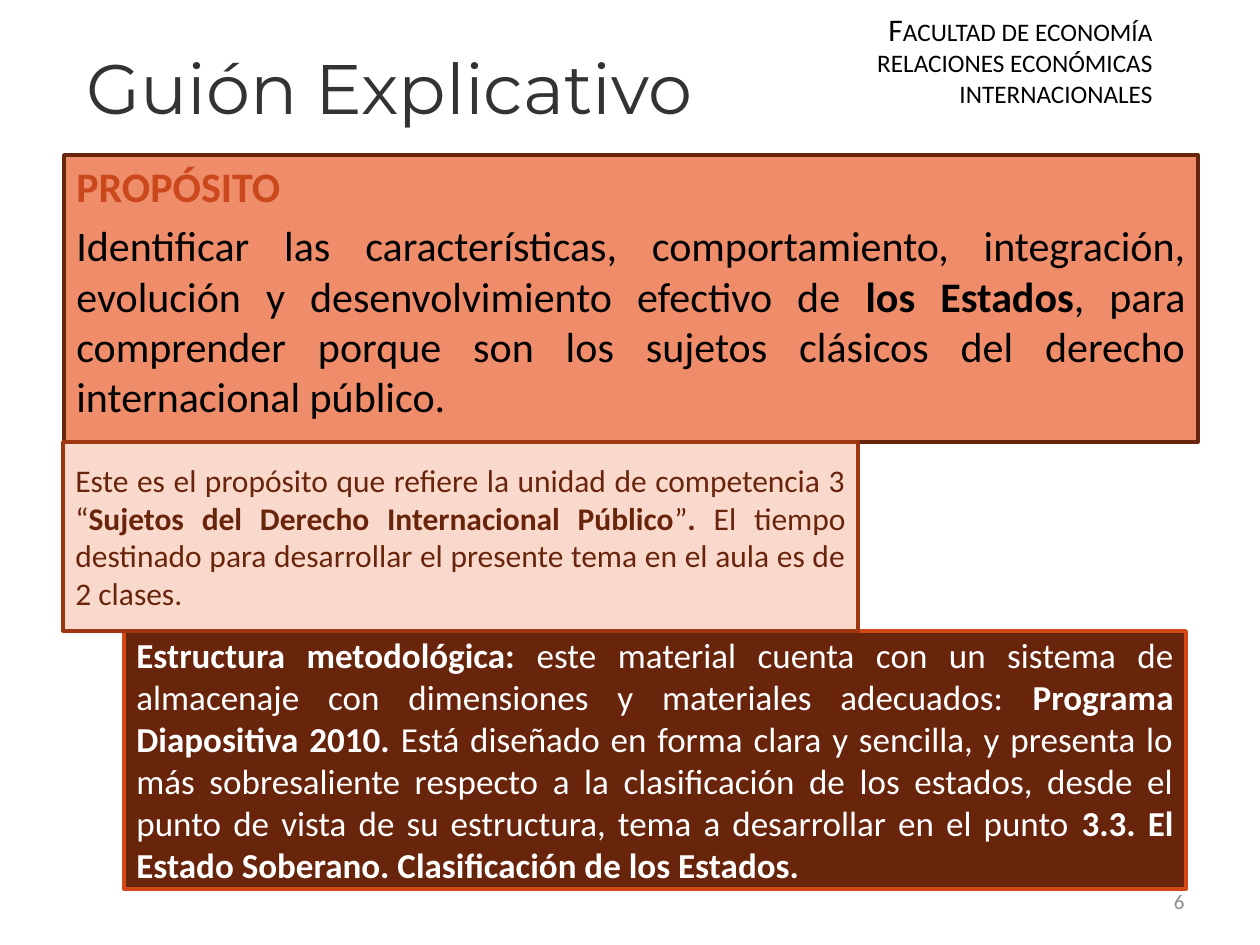
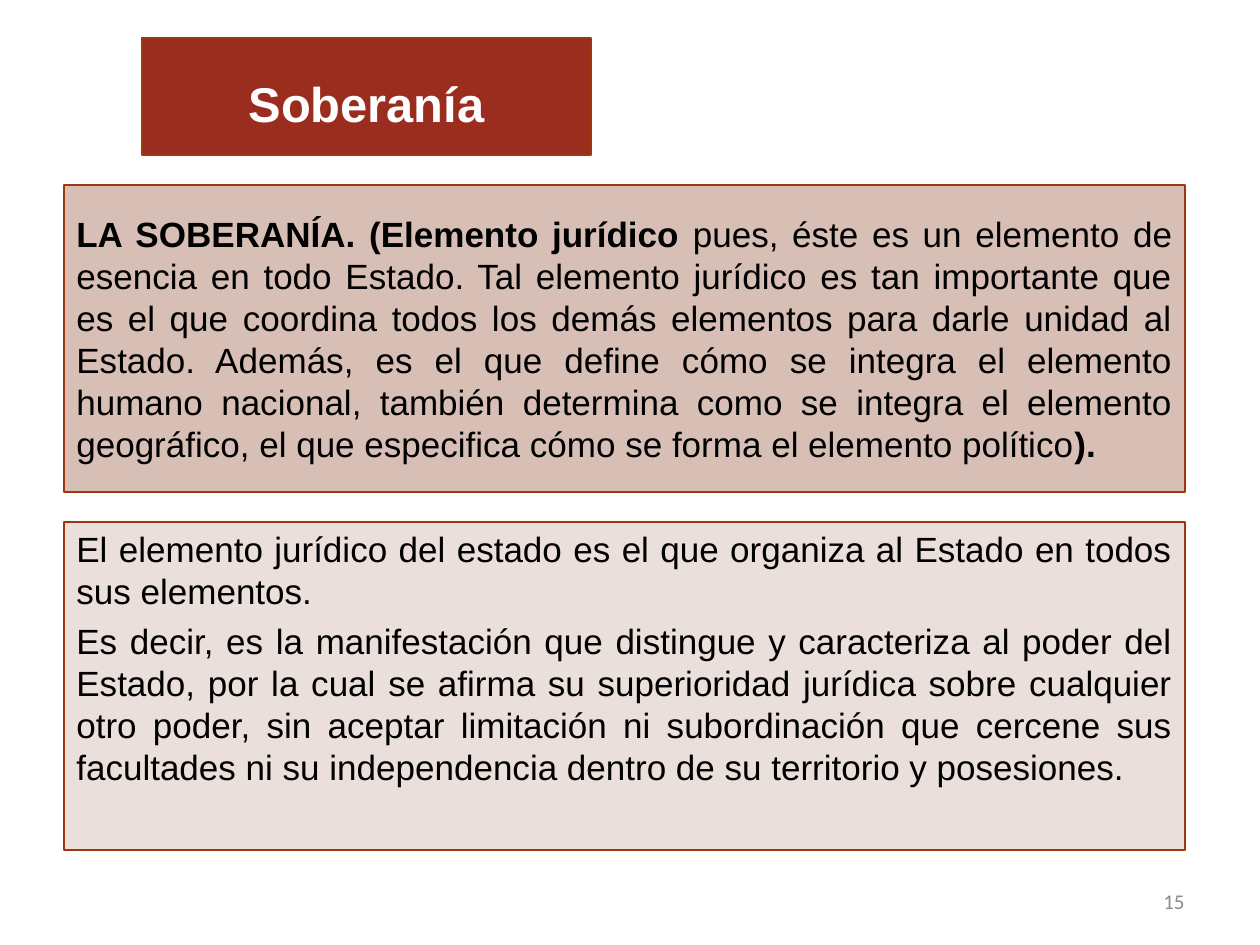
from dataclasses import dataclass
from typing import NamedTuple, Optional

import pptx
import pptx.dml.color
import pptx.enum.shapes
import pptx.enum.text
import pptx.presentation
import pptx.slide
import pptx.util

PX = pptx.util.Inches(1) / 126
ALIGN = pptx.enum.text.PP_ALIGN
ANCHOR = pptx.enum.text.MSO_ANCHOR

COLORS = {
    "black": "000000",
    "white": "FFFFFF",
    "charcoal": "353232",
    "gray": "8C8C8C",
    "salmon": "EF8C6A",
    "blush": "FAD9CD",
    "brown": "69240C",
    "rust": "9E3611",
    "orange": "D34817",
    "ember": "CA481C",
    "brick": "9B2D1F",
    "clay": "D8BFB6",
    "sand": "EBDFDB",
}


class Box(NamedTuple):
    left: int
    top: int
    width: int
    height: int


class Run(NamedTuple):
    text: str
    bold: bool = False
    size: Optional[float] = None


class Type(NamedTuple):
    font: str
    size: float
    color: str
    align: ALIGN = ALIGN.JUSTIFY


class Paragraph(NamedTuple):
    type: Type
    runs: tuple[Run, ...]
    space_before: float = 0


@dataclass(frozen=True)
class Block:
    box: Box
    paragraphs: tuple[Paragraph, ...]
    fill: Optional[str] = None
    border: str = "rust"
    border_width: float = 0.75
    anchor: ANCHOR = ANCHOR.MIDDLE
    inset_top: int = 6
    wrap: bool = True


def rgb(name: str) -> pptx.dml.color.RGBColor:
    return pptx.dml.color.RGBColor.from_string(COLORS[name])


def px(length: int) -> pptx.util.Emu:
    return pptx.util.Emu(round(length * PX))


def write(paragraph, content: Paragraph) -> None:
    style = content.type
    paragraph.alignment = style.align
    paragraph.space_before = pptx.util.Pt(content.space_before)
    paragraph.font.name = style.font
    paragraph.font.size = pptx.util.Pt(style.size)
    paragraph.font.color.rgb = rgb(style.color)
    same_weight = len({run.bold for run in content.runs}) == 1
    if same_weight:
        paragraph.font.bold = content.runs[0].bold
    for part in content.runs:
        run = paragraph.add_run()
        run.text = part.text
        if not same_weight:
            run.font.bold = part.bold
        if part.size:
            run.font.size = pptx.util.Pt(part.size)


def draw_block(slide: pptx.slide.Slide, block: Block) -> None:
    place = [px(length) for length in block.box]
    if block.fill:
        shape = slide.shapes.add_shape(
            pptx.enum.shapes.MSO_SHAPE.RECTANGLE, *place)
        shape.shadow.inherit = False
        shape.fill.solid()
        shape.fill.fore_color.rgb = rgb(block.fill)
        shape.line.color.rgb = rgb(block.border)
        shape.line.width = pptx.util.Pt(block.border_width)
    else:
        shape = slide.shapes.add_textbox(*place)
    frame = shape.text_frame
    frame.word_wrap = block.wrap
    frame.vertical_anchor = block.anchor
    frame.margin_top = px(block.inset_top)
    for index, content in enumerate(block.paragraphs):
        write(frame.add_paragraph() if index else frame.paragraphs[0], content)


def draw_slide(deck: pptx.presentation.Presentation,
               blocks: tuple[Block, ...], number: int) -> None:
    slide = deck.slides.add_slide(deck.slide_layouts[6])
    footer = Block(Box(903, 876, 294, 50),
                   (Paragraph(PAGE_NUMBER, (Run(str(number)),)),))
    for block in (footer, *blocks):
        draw_block(slide, block)


PAGE_NUMBER = Type("Calibri", 12, "gray", ALIGN.RIGHT)
FACULTY = Type("Calibri", 14.4, "black", ALIGN.RIGHT)
GUIDE_TITLE = Type("Montserrat", 40, "charcoal", ALIGN.LEFT)
PURPOSE_LABEL = Type("Calibri", 24, "ember")
PURPOSE = Type("Calibri", 24, "black")
UNIT = Type("Calibri", 18, "brown")
METHOD = Type("Calibri", 20, "white")
TOPIC_TITLE = Type("Arial", 27.9, "white", ALIGN.CENTER)
TOPIC = Type("Arial", 20, "black")

GUIDE = (
    Block(Box(772, 6, 393, 129), (
        Paragraph(FACULTY, (Run("F", size=18), Run("ACULTAD DE ECONOMÍA"))),
        Paragraph(FACULTY, (Run("RELACIONES ECONÓMICAS INTERNACIONALES"),)),
    ), anchor=ANCHOR.TOP, inset_top=4),
    Block(Box(64, 155, 1134, 287), (
        Paragraph(PURPOSE_LABEL, (Run("PROPÓSITO", True),)),
        Paragraph(PURPOSE, (
            Run("Identificar las características, comportamiento, integración, "
                "evolución y desenvolvimiento efectivo de "),
            Run("los Estados", True),
            Run(", para comprender porque son los sujetos clásicos del derecho "
                "internacional público."),
        ), 4.8),
    ), "salmon", "brown", 2, ANCHOR.TOP),
    Block(Box(124, 631, 1062, 258), (
        Paragraph(METHOD, (
            Run("Estructura metodológica:", True),
            Run(" este material cuenta con un sistema de almacenaje con "
                "dimensiones y materiales adecuados: "),
            Run("Programa Diapositiva 2010. ", True),
            Run("Está diseñado en forma clara y sencilla, y presenta lo más "
                "sobresaliente respecto a la clasificación de los estados, "
                "desde el punto de vista de su estructura, tema a desarrollar "
                "en el punto "),
            Run("3.3. El Estado Soberano. Clasificación de los Estados.", True),
        )),
    ), "brown", "orange", 2),
    Block(Box(63, 442, 795, 189), (
        Paragraph(UNIT, (
            Run("Este es el propósito que refiere la unidad de competencia 3 “"),
            Run("Sujetos del Derecho Internacional Público", True),
            Run("”"),
            Run(". ", True),
            Run("El tiempo destinado para desarrollar el presente tema en el "
                "aula es de 2 clases."),
        )),
    ), "blush", "rust", 2),
    Block(Box(74, 39, 702, 97),
          (Paragraph(GUIDE_TITLE, (Run("Guión Explicativo"),)),),
          anchor=ANCHOR.TOP, wrap=False),
)

SOVEREIGNTY = (
    Block(Box(142, 38, 449, 117),
          (Paragraph(TOPIC_TITLE, (Run("Soberanía", True),)),),
          "brick", inset_top=20),
    Block(Box(64, 185, 1121, 307), (
        Paragraph(TOPIC, (
            Run("LA SOBERANÍA. (Elemento jurídico ", True),
            Run("pues, éste es un elemento de esencia en todo Estado. Tal "
                "elemento jurídico es tan importante que es el que coordina "
                "todos los demás elementos para darle unidad al Estado. "
                "Además, es el que define cómo se integra el elemento humano "
                "nacional, también determina como se integra el elemento "
                "geográfico, el que especifica cómo se forma el elemento "
                "político"),
            Run(").", True),
        )),
    ), "clay"),
    Block(Box(64, 522, 1121, 328), (
        Paragraph(TOPIC, (
            Run("El elemento jurídico del estado es el que organiza al Estado "
                "en todos sus elementos."),
        )),
        Paragraph(TOPIC, (
            Run("Es decir, es la manifestación que distingue y caracteriza al "
                "poder del Estado, por la cual se afirma su superioridad "
                "jurídica sobre cualquier otro poder, sin aceptar limitación "
                "ni subordinación que cercene sus facultades ni su "
                "independencia dentro de su territorio y posesiones."),
        ), 4),
    ), "sand", anchor=ANCHOR.TOP),
)


def main() -> None:
    deck = pptx.Presentation()
    deck.slide_width = px(1260)
    deck.slide_height = px(945)
    draw_slide(deck, GUIDE, 6)
    draw_slide(deck, SOVEREIGNTY, 15)
    deck.save("out.pptx")


if __name__ == "__main__":
    main()
